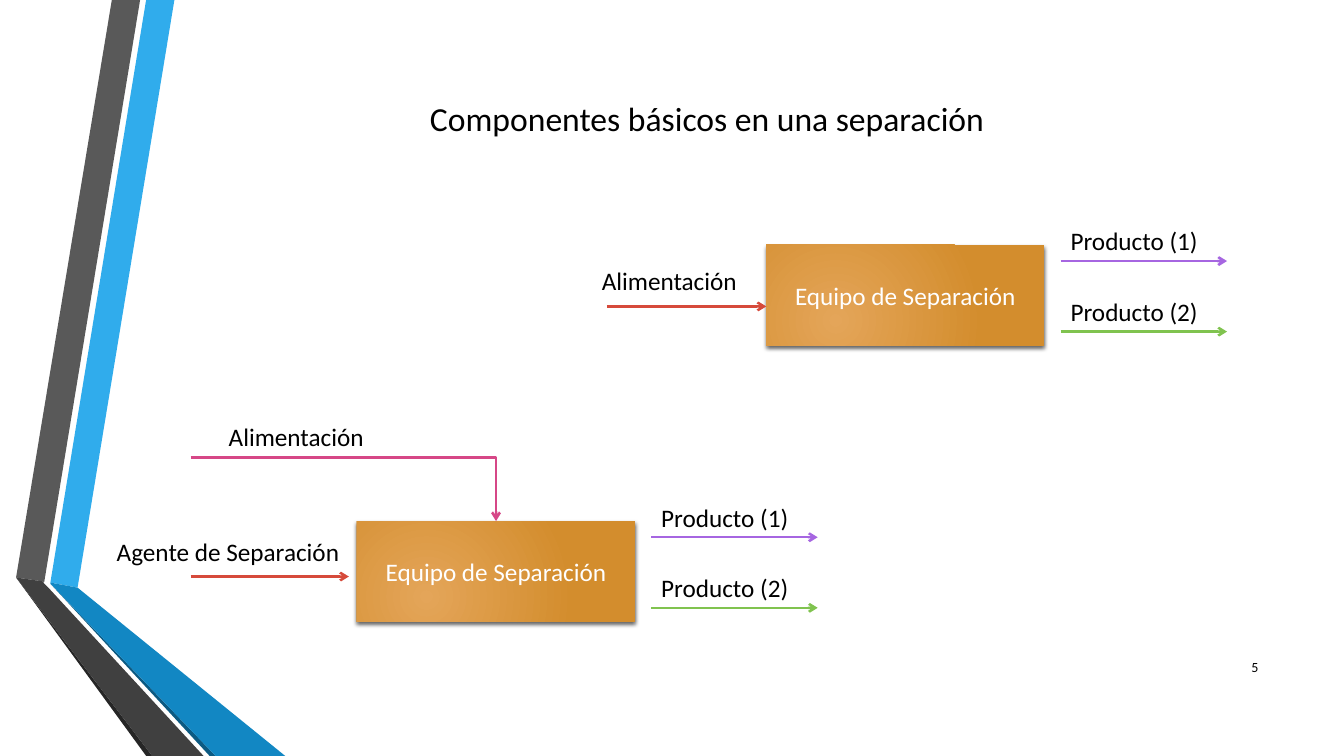
from lxml import etree
from pptx import Presentation
from pptx.dml.color import RGBColor as RGB
from pptx.enum.shapes import MSO_CONNECTOR as LINK, MSO_SHAPE as SHAPE
from pptx.enum.text import MSO_ANCHOR as ANCHOR, PP_ALIGN as ALIGN
from pptx.oxml import parse_xml
from pptx.oxml.ns import nsdecls, qn
from pptx.util import Pt

PX = 9144  # 100 px to the inch
SIZE = (1333, 750)
FONT = "Calibri"
HEX = {
    "sky": "30ACEC", "gray": "595959", "coal": "262626", "navy": "0C5A82",
    "blue": "1287C3", "dark": "404040", "amber": "E4A559", "ochre": "D38D2D",
    "red": "D64A3B", "pink": "D64787", "violet": "A666E1", "green": "80C34F",
    "black": "000000", "white": "FFFFFF",
}

RIBBONS = [
    ("sky", [(50, 578), (77, 583), (173, 0), (145, 0)]),
    ("gray", [(139, 0), (111, 0), (16, 573), (44, 577)]),
    ("coal", [(16, 573), (145, 750), (151, 750)]),
    ("navy", [(50, 579), (208, 750), (214, 750)]),
    ("blue", [(50, 579), (214, 750), (283, 750), (77, 583), (50, 578)]),
    ("dark", [(202, 750), (48, 583), (43, 578), (44, 577), (16, 573),
              (151, 750)]),
]

TITLE = ("Componentes básicos en una separación ", (390, 64, 630, 107))
NUMBER = ("5", (1198, 642, 60, 40))
UNIT = "Equipo de Separación"
BOX = (276, 100)
UNITS = [(354, 517), (760, 243)]
# text, colour, drop from the top of the unit to the arrow
PRODUCTS = [("Producto (1)", "violet", 16), ("Producto (2)", "green", 86)]
GAP, REACH, LIFT = 16, 165, 40
FEEDS = [  # colour, start, end
    ("red", (189, 572), (346, 572)),
    ("pink", (189, 454), (492, 517)),
    ("red", (602, 304), (760, 304)),
]
LABELS = [
    ("Agente de Separación", (106, 527, 276, 40)),
    ("Alimentación", (217, 413, 165, 40)),
    ("Alimentación", (587, 258, 165, 40)),
]

GRAD = f"""<a:gradFill {nsdecls('a')} rotWithShape="1"><a:gsLst>
<a:gs pos="0"><a:srgbClr val="{HEX['amber']}"/></a:gs>
<a:gs pos="100000"><a:srgbClr val="{HEX['ochre']}"/></a:gs></a:gsLst>
<a:path path="circle"><a:fillToRect l="50000" t="100000" r="100000"
b="50000"/></a:path></a:gradFill>"""
SHADOW = f"""<a:outerShdw {nsdecls('a')} blurRad="38100" dist="25400"
dir="5400000" rotWithShape="0"><a:srgbClr val="{HEX['black']}">
<a:alpha val="64000"/></a:srgbClr></a:outerShdw>"""


def emu(nums):
    return [n * PX for n in nums]


def color(key):
    return RGB.from_string(HEX[key])


def write(shape, text, size=18, ink="black", align=ALIGN.LEFT,
          anchor=ANCHOR.TOP):
    frame = shape.text_frame
    frame.word_wrap = True
    frame.vertical_anchor = anchor
    par = frame.paragraphs[0]
    par.alignment = align
    run = par.add_run()
    look = {"text": text}
    face = {"name": FONT, "size": Pt(size)}
    for item, values in ((run, look), (run.font, face)):
        for key, value in values.items():
            setattr(item, key, value)
    run.font.color.rgb = color(ink)


def label(shapes, text, area, **look):
    write(shapes.add_textbox(*emu(area)), text, **look)


def ribbon(shapes, tone, points):
    draft = shapes.build_freeform(*points[0], scale=PX)
    draft.add_line_segments(points[1:], close=True)
    shape = draft.convert_to_shape()
    shape.shadow.inherit = False
    shape.fill.solid()
    shape.fill.fore_color.rgb = color(tone)
    shape.line.fill.background()


def arrow(shapes, tone, start, end):
    """Draw a straight arrow, or one with a single bend if both axes differ."""
    bent = start[0] != end[0] and start[1] != end[1]
    kind = LINK.ELBOW if bent else LINK.STRAIGHT
    link = shapes.add_connector(kind, *emu(start + end))
    props = link._element.spPr
    if bent:
        props.find(qn("a:prstGeom")).set("prst", "bentConnector2")
    link.line.width = Pt(1.75)
    link.line.color.rgb = color(tone)
    etree.SubElement(props.find(qn("a:ln")), qn("a:tailEnd"), type="arrow")
    etree.SubElement(props, qn("a:effectLst"))


def unit(shapes, left, top):
    box = shapes.add_shape(SHAPE.RECTANGLE, *emu((left, top) + BOX))
    box.line.fill.background()
    box.fill.background()
    box.shadow.inherit = False
    props = box._element.spPr
    props.replace(props.find(qn("a:noFill")), parse_xml(GRAD))
    props.find(qn("a:effectLst")).append(parse_xml(SHADOW))
    write(box, UNIT, ink="white", align=ALIGN.CENTER, anchor=ANCHOR.MIDDLE)
    x = left + BOX[0] + GAP
    for text, tone, drop in PRODUCTS:
        y = top + drop
        arrow(shapes, tone, (x, y), (x + REACH, y))
        label(shapes, text, (x, y - LIFT, REACH, LIFT))


def main():
    deck = Presentation()
    deck.slide_width, deck.slide_height = emu(SIZE)
    shapes = deck.slides.add_slide(deck.slide_layouts[6]).shapes
    for tone, points in RIBBONS:
        ribbon(shapes, tone, points)
    for spot in UNITS:
        unit(shapes, *spot)
    for feed in FEEDS:
        arrow(shapes, *feed)
    for text, area in LABELS:
        label(shapes, text, area)
    label(shapes, *TITLE, size=24, align=ALIGN.CENTER, anchor=ANCHOR.MIDDLE)
    label(shapes, *NUMBER, size=10, align=ALIGN.RIGHT, anchor=ANCHOR.MIDDLE)
    deck.save("out.pptx")


if __name__ == "__main__":
    main()
